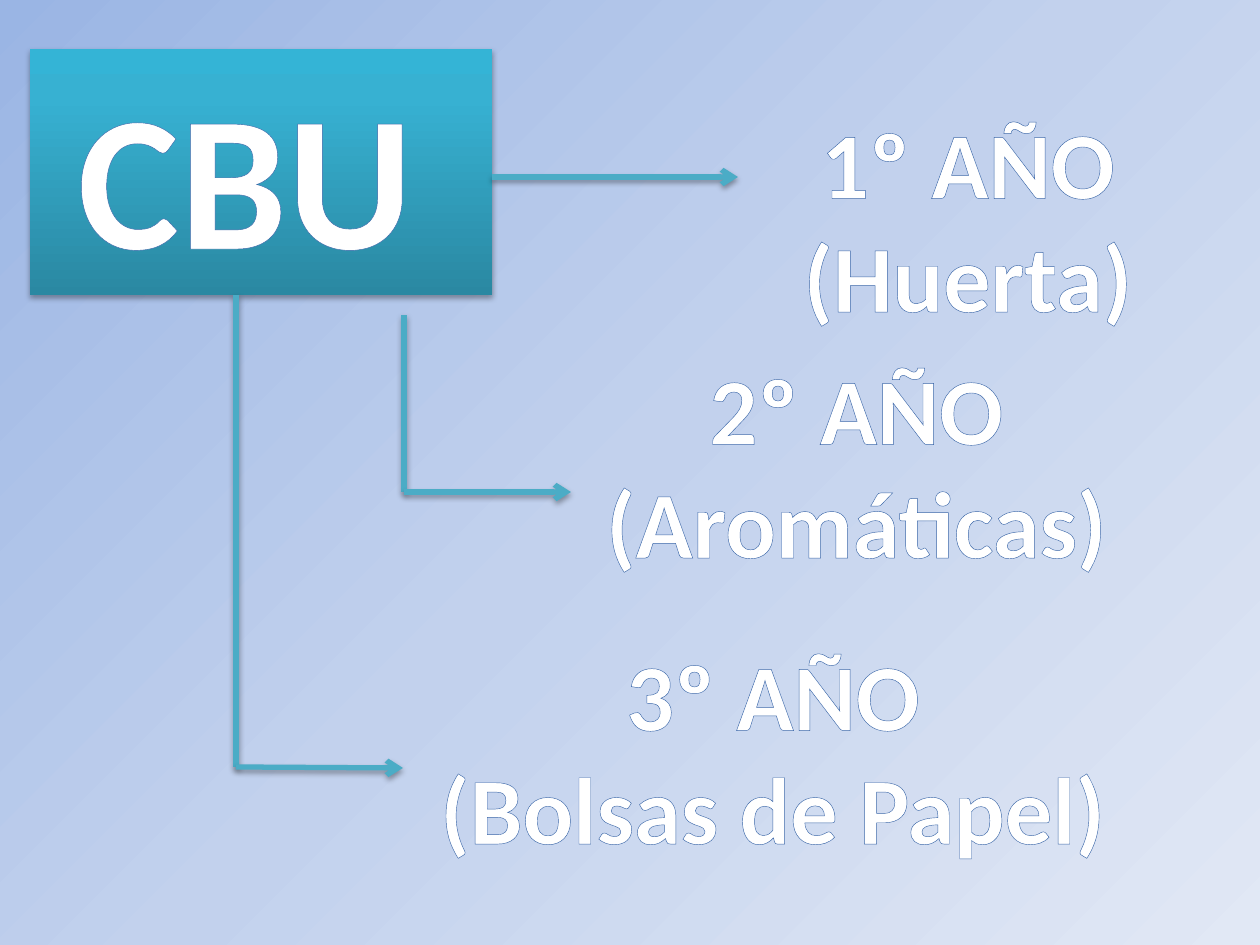
from lxml import etree
from pptx import Presentation
from pptx.dml.color import RGBColor
from pptx.enum.shapes import MSO_CONNECTOR, MSO_SHAPE
from pptx.enum.text import MSO_ANCHOR, MSO_AUTO_SIZE, PP_ALIGN
from pptx.oxml.ns import qn
from pptx.util import Emu, Pt

STRAIGHT = MSO_CONNECTOR.STRAIGHT
RECTANGLE = MSO_SHAPE.RECTANGLE
MIDDLE = MSO_ANCHOR.MIDDLE
GROW = MSO_AUTO_SIZE.SHAPE_TO_FIT_TEXT
CENTER = PP_ALIGN.CENTER

FONT = "Calibri"
WHITE = "FFFFFF"
OUTLINE = "3A66A8"
TEAL = "4BACC6"
BACKGROUND = [(0, "9AB5E4"), (50, "C2D1ED"), (100, "E1E8F5")]
CYCLE_FILL = [(0, "2A88A2"), (80, "37B1D2"), (100, "34B4D6")]

CYCLE = ("CBU", (30, 49, 462, 246))
YEARS = [
    (("1º AÑO", "(Huerta)"), (748, 98, 440, 242)),
    (("2º AÑO", "(Aromáticas)"), (561, 344, 591, 242)),
    (("3º AÑO", "(Bolsas de Papel)"), (325, 630, 896, 242)),
]
BRANCHES = [
    [(492, 177), (738, 177)],
    [(404, 315), (404, 492), (571, 492)],
    [(236, 295), (236, 767), (403, 768)],
]


def px(length):
    return Emu(round(length * 914400 / 126))


def colour(code):
    return RGBColor.from_string(code)


def add_node(parent, tag, **attributes):
    return etree.SubElement(parent, qn(tag), attributes)


def paint_gradient(fill, owner, stops, angle):
    fill.gradient()
    fill.gradient_angle = angle
    stop_list = owner.find(".//" + qn("a:gsLst"))
    for old_stop in list(stop_list):
        stop_list.remove(old_stop)
    for position, code in stops:
        stop = add_node(stop_list, "a:gs", pos=str(position * 1000))
        add_node(stop, "a:srgbClr", val=code)


def add_shadow(part):
    properties = part._element.spPr
    effects = properties.find(qn("a:effectLst"))
    if effects is None:
        effects = add_node(properties, "a:effectLst")
    shadow = add_node(effects, "a:outerShdw", blurRad="40000", dist="23000",
                      dir="5400000", rotWithShape="0")
    black = add_node(shadow, "a:srgbClr", val="000000")
    add_node(black, "a:alpha", val="35000")


def write_line(paragraph, wording, size):
    paragraph.alignment = CENTER
    paragraph.font.name = FONT
    paragraph.font.size = Pt(size)
    paragraph.font.bold = True
    paragraph.font.color.rgb = colour(WHITE)
    run = paragraph.add_run()
    run.text = wording
    outline = etree.Element(qn("a:ln"), w=str(Pt(2.48)))
    add_node(add_node(outline, "a:solidFill"), "a:srgbClr", val=OUTLINE)
    run.font._element.insert(0, outline)


def add_cycle(slide, wording, place):
    box = slide.shapes.add_shape(RECTANGLE, *map(px, place))
    box.shadow.inherit = False
    box.line.fill.background()
    paint_gradient(box.fill, box._element, CYCLE_FILL, 90)
    add_shadow(box)
    frame = box.text_frame
    frame.word_wrap = True
    frame.auto_size = GROW
    frame.vertical_anchor = MIDDLE
    title = frame.paragraphs[0]
    write_line(title, wording, 110)
    space = title.add_run()
    space.text = " "
    space.font.size = Pt(80)


def add_branch(slide, points):
    for start, end in zip(points, points[1:]):
        line = slide.shapes.add_connector(STRAIGHT, *map(px, start + end))
        line.line.width = Pt(3)
        line.line.color.rgb = colour(TEAL)
        if end == points[-1]:
            stroke = line._element.spPr.find(qn("a:ln"))
            add_node(stroke, "a:tailEnd", type="arrow")
        add_shadow(line)


def add_year(slide, wordings, place):
    frame = slide.shapes.add_textbox(*map(px, place)).text_frame
    frame.word_wrap = True
    frame.auto_size = GROW
    for index, wording in enumerate(wordings):
        paragraph = frame.add_paragraph() if index else frame.paragraphs[0]
        write_line(paragraph, wording, 54)


def main():
    deck = Presentation()
    deck.slide_width, deck.slide_height = px(1260), px(945)
    slide = deck.slides.add_slide(deck.slide_layouts[6])
    paint_gradient(slide.background.fill, slide._element, BACKGROUND, 315)
    add_cycle(slide, *CYCLE)
    for points, (wordings, place) in zip(BRANCHES, YEARS):
        add_branch(slide, points)
        add_year(slide, wordings, place)
    deck.save("out.pptx")


if __name__ == "__main__":
    main()
